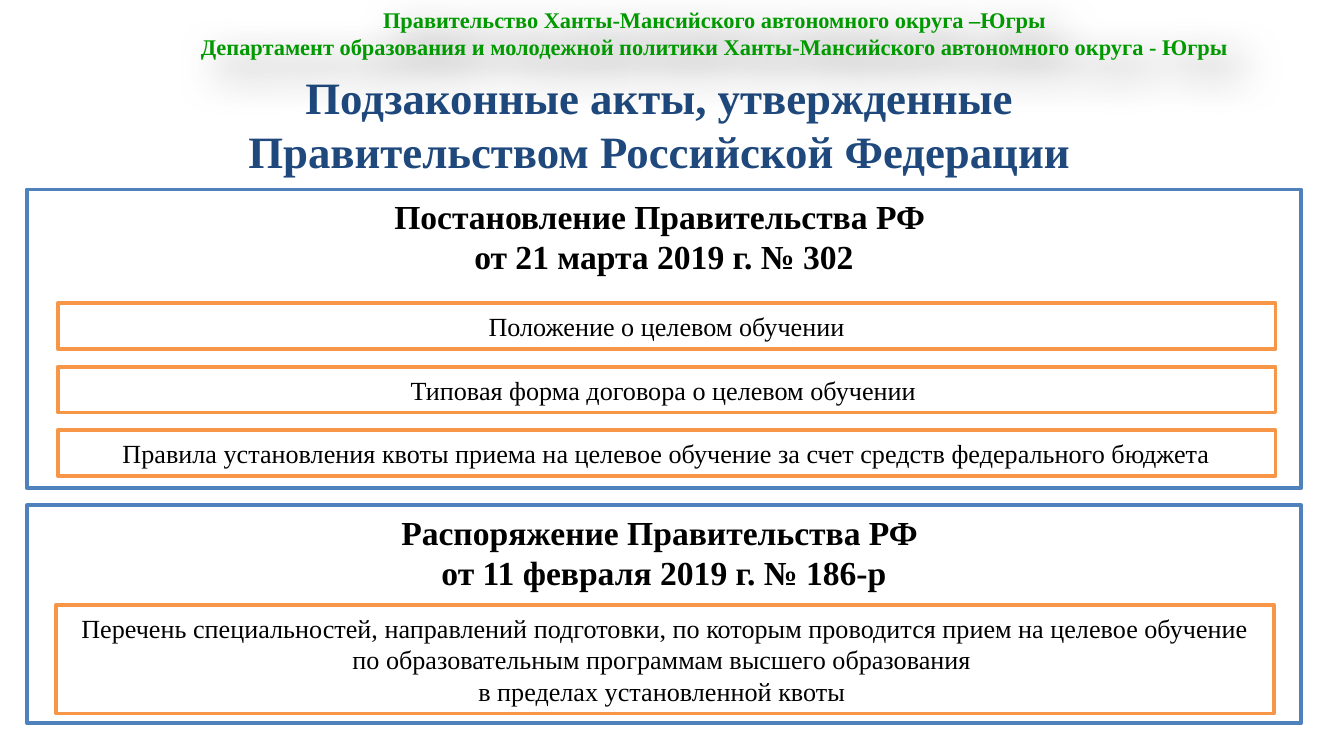
from lxml import etree
from pptx import Presentation
from pptx.dml.color import RGBColor
from pptx.enum.shapes import MSO_SHAPE
from pptx.enum.text import MSO_ANCHOR, MSO_AUTO_SIZE, PP_ALIGN
from pptx.oxml.ns import qn
from pptx.util import Pt

RECT = MSO_SHAPE.RECTANGLE
TOP, MIDDLE = MSO_ANCHOR.TOP, MSO_ANCHOR.MIDDLE
CENTER = PP_ALIGN.CENTER
FIXED = MSO_AUTO_SIZE.NONE

COLORS = {
    "green": "009900",
    "navy": "1F497D",
    "blue": "4F81BD",
    "orange": "F79646",
    "black": "000000",
    "white": "FFFFFF",
}

HEAD = {"size": Pt(12), "bold": True}
TITLE = {"size": Pt(24), "bold": True}
ACT = {"size": Pt(18), "bold": True}
ITEM = {"size": Pt(14), "bold": False}

ITEMS = [
    "Положение о целевом обучении",
    "Типовая форма договора о целевом обучении ",
    "Правила установления квоты приема на целевое обучение "
    "за счет средств федерального бюджета",
]


def color(name):
    return RGBColor.from_string(COLORS[name])


def write(shape, lines, font, ink, anchor):
    """Fill a shape with centred paragraphs."""
    frame = shape.text_frame
    frame.word_wrap = True
    frame.auto_size = FIXED
    frame.vertical_anchor = anchor
    frame.text = "\n".join(lines)
    for para in frame.paragraphs:
        para.alignment = CENTER
        for run in para.runs:
            for key, value in font.items():
                setattr(run.font, key, value)
            run.font.name = "Times New Roman"
            run.font.color.rgb = color(ink)


def add_box(slide, place, edge, lines, font, anchor):
    box = slide.shapes.add_shape(RECT, *map(Pt, place))
    box.shadow.inherit = False
    box.fill.solid()
    box.fill.fore_color.rgb = color("white")
    box.line.color.rgb = color(edge)
    box.line.width = Pt(2)
    write(box, lines, font, "black", anchor)


def add_glow(shape):
    """Give a shape a soft shadow, down and to the right."""
    effects = etree.SubElement(shape._element.spPr, qn("a:effectLst"))
    shade = etree.SubElement(
        effects, qn("a:outerShdw"), blurRad=str(Pt(23)), dist=str(Pt(11)),
        dir="2700000", algn="tl", rotWithShape="0")
    tint = etree.SubElement(shade, qn("a:srgbClr"), val=COLORS["black"])
    etree.SubElement(tint, qn("a:alpha"), val="65000")


def add_head(slide, place, lines):
    head = slide.shapes.add_textbox(*map(Pt, place))
    write(head, lines, HEAD, "green", TOP)
    add_glow(head)


def set_title(slide, place, lines):
    title = slide.shapes.title
    for key, value in zip(("left", "top", "width", "height"), place):
        setattr(title, key, Pt(value))
    write(title, lines, TITLE, "navy", TOP)


def main():
    deck = Presentation()
    deck.slide_width, deck.slide_height = Pt(720), Pt(405)
    slide = deck.slides.add_slide(deck.slide_layouts[5])

    add_head(slide, (78.5, 0, 609, 36), [
        "Правительство Ханты-Мансийского автономного округа –Югры",
        "Департамент образования и молодежной политики "
        "Ханты-Мансийского автономного округа - Югры",
    ])
    set_title(slide, (21.6, 34, 669, 34), [
        "Подзаконные акты, утвержденные ",
        "Правительством Российской Федерации ",
    ])

    add_box(slide, (14.4, 101.5, 682.6, 160), "blue", [
        "Постановление Правительства РФ ",
        "от 21 марта 2019 г. № 302",
    ], ACT, TOP)
    for row, item in enumerate(ITEMS):
        add_box(slide, (31, 162.5 + 34 * row, 652.3, 24.5), "orange",
                [item], ITEM, MIDDLE)

    add_box(slide, (14.4, 270.7, 682.6, 116.6), "blue", [
        "Распоряжение Правительства РФ ",
        "от 11 февраля 2019 г. № 186-р",
    ], ACT, TOP)
    add_box(slide, (30.2, 324, 652.3, 58.3), "orange", [
        "Перечень специальностей, направлений подготовки, по которым "
        "проводится прием на целевое обучение по образовательным "
        "программам высшего образования ",
        "в пределах установленной квоты ",
    ], ITEM, MIDDLE)

    deck.save("out.pptx")


if __name__ == "__main__":
    main()
